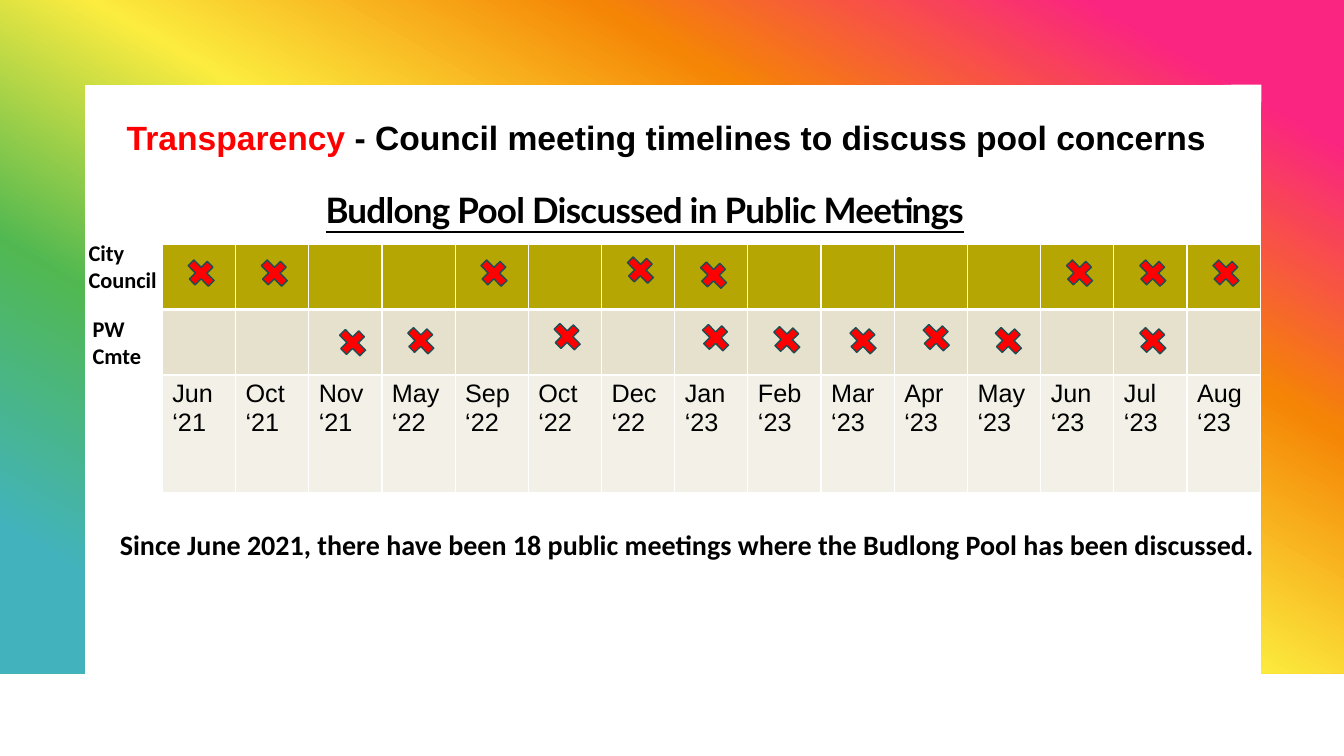
import pptx
import pptx.util
import pptx.dml.color
import pptx.enum.shapes
import pptx.enum.text
import pptx.oxml
import pptx.oxml.ns
from lxml import etree

Inches, Pt = pptx.util.Inches, pptx.util.Pt
RGB = pptx.dml.color.RGBColor
BLACK, WHITE, RED = RGB(0, 0, 0), RGB(255, 255, 255), RGB(255, 0, 0)
TEAL = RGB(0x1D, 0x4E, 0x53)
OLIVE, SAND, CREAM = RGB(0xB5, 0xA6, 3), RGB(0xE5, 0xE1, 0xCC), RGB(0xF3, 0xF1, 0xE7)

# Content
TITLE = "Budlong Pool Discussed in Public Meetings"
HEAD = [("Transparency ", RED),
        ("- Council meeting timelines to discuss pool concerns", BLACK)]
LABELS = [("City Council", (0.78, 2.32, 1.03, 0.64)),
          ("PW Cmte", (0.82, 3.08, 0.97, 0.64))]
SUMMARY = ("Since June 2021, there have been 18 public meetings "
           "where the Budlong Pool has been discussed.")
MONTHS = ["Jun ‘21", "Oct\n‘21", "Nov\n‘21", "May ‘22", "Sep\n‘22",
          "Oct ‘22", "Dec ‘22", "Jan\n‘23", "Feb\n‘23", "Mar\n‘23",
          "Apr ‘23", "May\n‘23", "Jun\n‘23", "Jul\n‘23", "Aug\n‘23"]
# Row top, then column: nudge of its mark
COUNCIL = (2.54, {0: (0, 0), 1: (0, 0), 4: (0, 0), 6: (0, -0.03), 7: (0, 0.02),
                  12: (0, 0), 13: (0, 0), 14: (0, 0)})
WORKS = (3.21, {2: (0.05, 0.02), 3: (0, 0), 5: (0, -0.04), 7: (0.02, -0.03),
                8: (0, -0.01), 9: (0.03, 0), 10: (0.03, -0.03), 11: (0.02, 0),
                13: (0, 0)})
ROWS = [(0.65, OLIVE), (0.65, SAND), (1.17, CREAM)]
RAINBOW = [(10, "FA2481"), (30, "F58505"), (50, "FCEC3F"),
           (70, "51B851"), (90, "42B3BD")]
FRAME = [(0, 0), (13.33, 0), (13.33, 6.68), (12.51, 6.68),
         (12.51, 0.84), (0.84, 0.84), (0.84, 6.68), (0, 6.68)]
LEFT, TOP, WIDTH = 1.61, 2.42, 10.89
STEP = WIDTH / len(MONTHS)

deck = pptx.Presentation()
deck.slide_width, deck.slide_height = Inches(13.33), Inches(7.5)
slide = deck.slides.add_slide(deck.slide_layouts[6])
shapes = slide.shapes


def write(frame, text, size=16, font="Calibri", color=BLACK, bold=True,
          align=None, under=None, space=None, line=None):
    """Fill a text frame; text is a string or a list of (words, color)."""
    frame.word_wrap = True
    parts = [[(row, color)] for row in text.split("\n")] if isinstance(text, str) else [text]
    for i, runs in enumerate(parts):
        para = frame.add_paragraph() if i else frame.paragraphs[0]
        para.alignment, para.line_spacing = align, line
        for words, tint in runs:
            run = para.add_run()
            run.text = words
            face = run.font
            face.size, face.name, face.bold = Pt(size), font, bold
            face.underline, face.color.rgb = under, tint
            if space:
                face._element.set("spc", str(int(space * 100)))


def label(text, box, grow=True, **style):
    frame = shapes.add_textbox(*map(Inches, box)).text_frame
    write(frame, text, **style)
    if grow:
        frame.auto_size = pptx.enum.text.MSO_AUTO_SIZE.SHAPE_TO_FIT_TEXT


def edge(cell, low):
    """White cell borders; low is the width of the bottom one."""
    props = cell._tc.get_or_add_tcPr()
    for i, (tag, wide) in enumerate([("lnL", 1), ("lnR", 1), ("lnT", 1), ("lnB", low)]):
        props.insert(i, pptx.oxml.parse_xml(
            f'<a:{tag} {pptx.oxml.ns.nsdecls("a")} w="{Pt(wide)}">'
            f'<a:solidFill><a:srgbClr val="{WHITE}"/></a:solidFill></a:{tag}>'))


# Rainbow frame
pen = shapes.build_freeform(*map(Inches, FRAME[0]))
pen.add_line_segments([tuple(map(Inches, spot)) for spot in FRAME[1:]])
frame = pen.convert_to_shape()
frame.shadow.inherit = False
frame.line.fill.background()
frame.fill.gradient()
grad = frame._element.spPr.find(pptx.oxml.ns.qn("a:gradFill"))
stops = grad.find(pptx.oxml.ns.qn("a:gsLst"))
for stop in list(stops):
    stops.remove(stop)
for place, tint in RAINBOW:
    stop = etree.SubElement(stops, pptx.oxml.ns.qn("a:gs"), pos=str(place * 1000))
    etree.SubElement(stop, pptx.oxml.ns.qn("a:srgbClr"), val=tint)
lin = grad.find(pptx.oxml.ns.qn("a:lin"))
lin.set("ang", str(120 * 60000))
lin.set("scaled", "0")

# Title
label(TITLE, (3.13, 1.85, 8.78, 0.64), grow=False, size=25, font="Lato",
      under=True, space=-0.5, line=0.95)

# Timeline table
high = sum(tall for tall, _ in ROWS)
table = shapes.add_table(len(ROWS), len(MONTHS), Inches(LEFT), Inches(TOP),
                         Inches(WIDTH), Inches(high)).table
for col in table.columns:
    col.width = Inches(STEP)
for r, (tall, tint) in enumerate(ROWS):
    table.rows[r].height = Inches(tall)
    for c, month in enumerate(MONTHS):
        cell = table.cell(r, c)
        cell.fill.solid()
        cell.fill.fore_color.rgb = tint
        edge(cell, 3 if r == 0 else 1)
        if r == 2:
            write(cell.text_frame, month, size=18, font="Arial", bold=False)

# Meeting marks
for top, marks in (COUNCIL, WORKS):
    for c, (dx, dy) in marks.items():
        mark = shapes.add_shape(
            pptx.enum.shapes.MSO_SHAPE.MATH_PLUS, Inches(LEFT + 0.19 + c * STEP + dx),
            Inches(top + dy), Inches(0.39), Inches(0.34))
        mark.rotation = 45.6
        mark.shadow.inherit = False
        mark.fill.solid()
        mark.fill.fore_color.rgb = RED
        mark.line.color.rgb = TEAL
        mark.line.width = Pt(1)

# Row labels, summary and heading
for text, box in LABELS:
    label(text, box)
label(SUMMARY, (1.09, 5.18, 11.48, 0.44), size=20)
label(HEAD, (0.98, 1.11, 11.26, 0.5), size=24, font="Arial",
      align=pptx.enum.text.PP_ALIGN.CENTER)

deck.save("out.pptx")
